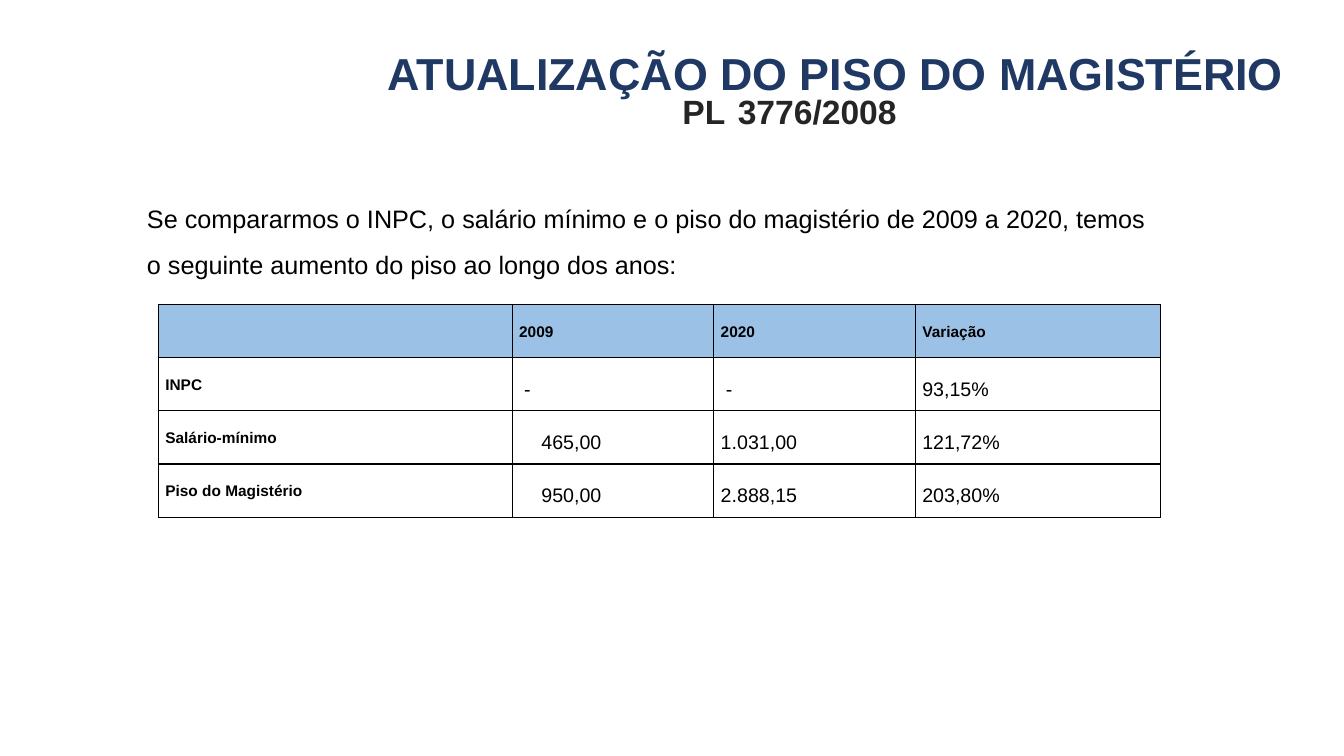
from lxml import etree
from pptx import Presentation
from pptx import util as u
from pptx.dml.color import RGBColor
from pptx.enum import text
from pptx.oxml import ns

COLORS = {"navy": "1F3864", "charcoal": "252525", "black": "000000", "header": "9BC2E6"}
ALIGN = text.PP_ALIGN


class SlideBuilder:
    """Holds the style and the slide; lengths are percentages of the slide's size."""

    font_name = "Arial"
    border_width = u.Pt(1)

    def __init__(self, deck):
        self.deck = deck
        self.slide = deck.slides.add_slide(deck.slide_layouts[6])

    def across(self, percent):
        return round(self.deck.slide_width * percent / 100)

    def down(self, percent):
        return round(self.deck.slide_height * percent / 100)

    def style(self, font, size, color="black", bold=False):
        font.name = self.font_name
        font.size = u.Pt(size)
        font.bold = bold
        font.color.rgb = RGBColor.from_string(COLORS[color])

    def textbox(self, left, top, width, height, pieces, align, inset=0.1, spacing=None):
        """Each piece is (words, size, color, bold)."""
        frame = self.slide.shapes.add_textbox(
            self.across(left), self.down(top), self.across(width), self.down(height)
        ).text_frame
        frame.word_wrap = True
        frame.margin_top = frame.margin_bottom = u.Inches(inset)
        paragraph = frame.paragraphs[0]
        paragraph.alignment = align
        paragraph.line_spacing = spacing
        for words, *look in pieces:
            run = paragraph.add_run()
            run.text = words
            self.style(run.font, *look)

    def border(self, cell):
        properties = cell._tc.get_or_add_tcPr()
        for position, side in enumerate(("lnL", "lnR", "lnT", "lnB")):
            line = etree.Element(ns.qn(f"a:{side}"), w=str(self.border_width))
            fill = etree.SubElement(line, ns.qn("a:solidFill"))
            etree.SubElement(fill, ns.qn("a:srgbClr"), val=COLORS["black"])
            properties.insert(position, line)

    def cell(self, cell, words, heading, label, indent):
        cell.margin_left = u.Inches(0.07 + indent)
        cell.margin_right = u.Inches(0.07)
        cell.margin_top = u.Inches(0.1)
        cell.margin_bottom = u.Inches(0.05)
        if heading:
            cell.fill.solid()
            cell.fill.fore_color.rgb = RGBColor.from_string(COLORS["header"])
        else:
            cell.fill.background()
        self.border(cell)
        if words:
            paragraph = cell.text_frame.paragraphs[0]
            paragraph.text = words
            paragraph.alignment = ALIGN.JUSTIFY
            paragraph.line_spacing = 1.5
            bold = heading or label
            self.style(paragraph.runs[0].font, 11 if bold else 14, bold=bold)

    def table(self, left, top, column_widths, row_height, rows, indents):
        """Indents, in inches, are given by (row, column)."""
        grid = self.slide.shapes.add_table(
            len(rows), len(column_widths), self.across(left), self.down(top),
            self.across(sum(column_widths)), self.down(row_height * len(rows)),
        ).table
        grid.first_row = grid.horz_banding = False
        for column, width in zip(grid.columns, column_widths):
            column.width = self.across(width)
        for r, row in enumerate(rows):
            for c, words in enumerate(row):
                self.cell(grid.cell(r, c), words, r == 0, c == 0, indents.get((r, c), 0))


def main():
    deck = Presentation()
    deck.slide_width, deck.slide_height = u.Inches(13.33), u.Inches(7.5)
    builder = SlideBuilder(deck)

    comparison = [
        ("", "2009", "2020", "Variação"),
        ("INPC", "-", "-", "93,15%"),
        ("Salário-mínimo", "465,00", "1.031,00", "121,72%"),
        ("Piso do Magistério", "950,00", "2.888,15", "203,80%"),
    ]
    indents = {(1, 1): 0.05, (1, 2): 0.05, (2, 1): 0.22, (3, 1): 0.22}
    builder.table(11.78, 40.27, (26.33, 15, 15, 18.23), 7.04, comparison, indents)

    builder.textbox(
        25.36, 5.33, 73.67, 13.87,
        [("ATUALIZAÇÃO DO PISO DO MAGISTÉRIO", 32, "navy", True)],
        ALIGN.CENTER, inset=0.05,
    )
    builder.textbox(
        46.44, 9.2, 24.6, 9.87,
        [("PL", 24, "charcoal", True), (" ", 32, "navy", True),
         ("3776/2008", 24, "charcoal", True)],
        ALIGN.CENTER,
    )
    builder.textbox(
        10.2, 23.6, 75.77, 12.8,
        [("Se compararmos o INPC, o salário mínimo e o piso do magistério de 2009 a 2020, "
          "temos o seguinte aumento do piso ao longo dos anos:", 18)],
        ALIGN.JUSTIFY, spacing=1.5,
    )
    deck.save("out.pptx")


if __name__ == "__main__":
    main()
